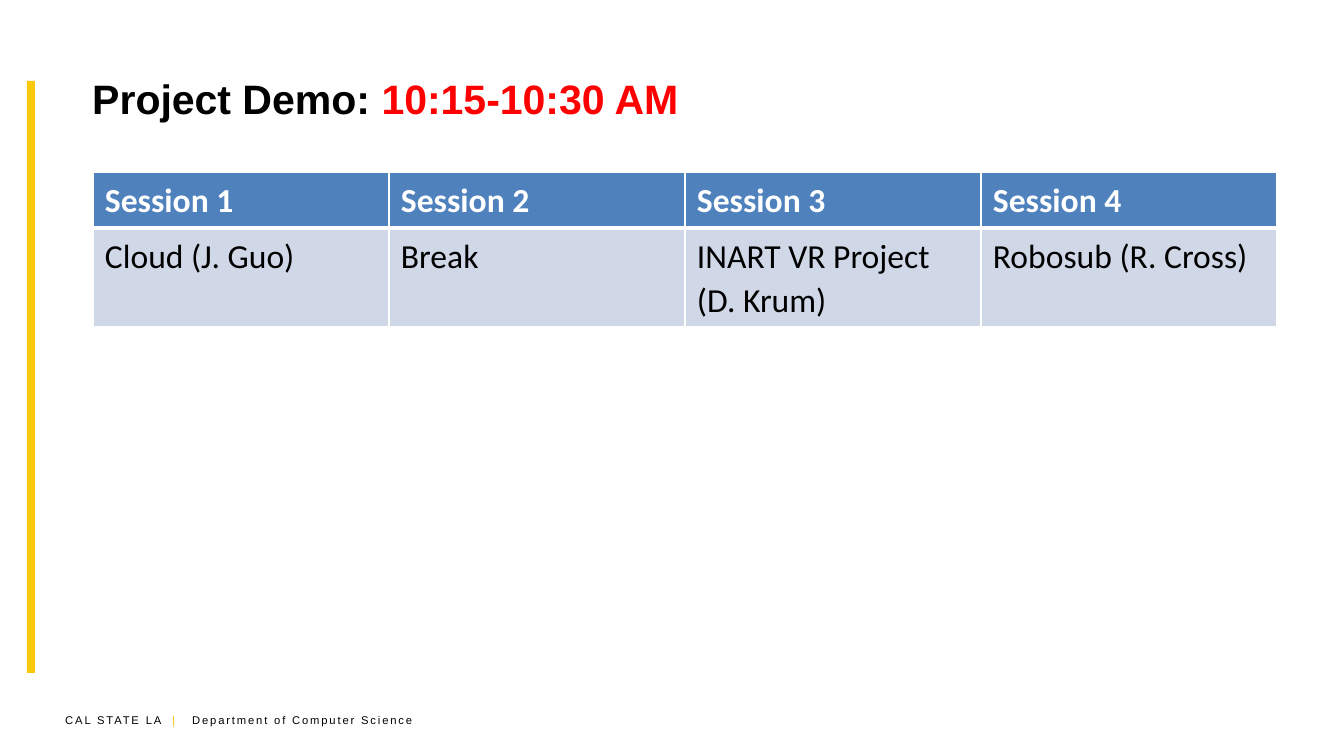
from lxml import etree
from pptx import Presentation
from pptx.dml.color import RGBColor
from pptx.enum.shapes import MSO_SHAPE
from pptx.enum.text import MSO_ANCHOR
from pptx.oxml.ns import qn
from pptx.util import Pt

RECT = MSO_SHAPE.RECTANGLE
MIDDLE = MSO_ANCHOR.MIDDLE

C = {"black": "000000", "white": "FFFFFF", "red": "FF0000",
     "gold": "FCC90A", "header": "4F81BD", "body": "D0D8E8"}

TITLE = [("Project Demo: ", "black"), ("10:15-10:30 AM", "red")]
FOOTER = [("CAL STATE LA\t", "black"), ("|\t", "gold"),
          ("Department of Computer Science", "black")]
FOOTER_TABS = (107, 127)
SESSIONS = [
    ["Session 1", "Session 2", "Session 3", "Session 4"],
    ["Cloud (J. Guo)", "Break", "INART VR Project (D. Krum)", "Robosub (R. Cross)"],
]
ROW_STYLES = [  # height, fill, text colour, bold, bottom border in points
    (56, "header", "white", True, 3),
    (99, "body", "black", False, 1),
]
COL_W = 296


def px(n):
    return round(n * 914400 / 134.4)


def rgb(name):
    return RGBColor.from_string(C[name])


def add_run(p, text, color, size, font="Arial", bold=False, spacing=0):
    r = p.add_run()
    r.text = text
    r.font.name, r.font.size, r.font.bold = font, Pt(size), bold
    r.font.color.rgb = rgb(color)
    if spacing:
        r._r.get_or_add_rPr().set("spc", str(spacing * 100))


def add_text(s, box, anchor=None):
    tf = s.shapes.add_textbox(*map(px, box)).text_frame
    tf.word_wrap = True
    tf.vertical_anchor = anchor
    return tf.paragraphs[0]


def add_tabs(p, stops):
    tabs = etree.SubElement(p._p.get_or_add_pPr(), qn("a:tabLst"))
    for stop in stops:
        etree.SubElement(tabs, qn("a:tab"), pos=str(px(stop)), algn="l")


def add_borders(cell, widths):
    """Draw white cell borders; widths maps a side tag to points."""
    tcPr = cell._tc.get_or_add_tcPr()
    for i, (side, width) in enumerate(widths.items()):
        ln = etree.Element(qn(f"a:{side}"), w=str(Pt(width)))
        fill = etree.SubElement(ln, qn("a:solidFill"))
        etree.SubElement(fill, qn("a:srgbClr"), val=C["white"])
        tcPr.insert(i, ln)


prs = Presentation()
prs.slide_width, prs.slide_height = px(1344), px(756)
s = prs.slides.add_slide(prs.slide_layouts[6])

p = add_text(s, (52, 707, 393, 27))
add_tabs(p, FOOTER_TABS)
for text, color in FOOTER:
    add_run(p, text, color, 6, spacing=1)

bar = s.shapes.add_shape(RECT, px(27), px(81), px(8), px(592))
bar.shadow.inherit = False
bar.fill.solid()
bar.fill.fore_color.rgb = rgb("gold")
bar.line.fill.background()

p = add_text(s, (79, 35, 1196, 126), MIDDLE)
for text, color in TITLE:
    add_run(p, text, color, 22, bold=True)

rows, cols = len(SESSIONS), len(SESSIONS[0])
height = sum(style[0] for style in ROW_STYLES)
table = s.shapes.add_table(rows, cols, px(93), px(172), px(COL_W * cols), px(height)).table
for col in table.columns:
    col.width = px(COL_W)
top_border = 1
for row, texts, (row_h, fill, color, bold, bottom) in zip(table.rows, SESSIONS, ROW_STYLES):
    row.height = px(row_h)
    for cell, text in zip(row.cells, texts):
        cell.margin_left = cell.margin_right = px(12)
        cell.margin_top = cell.margin_bottom = px(6)
        cell.fill.solid()
        cell.fill.fore_color.rgb = rgb(fill)
        add_borders(cell, {"lnL": 1, "lnR": 1, "lnT": top_border, "lnB": bottom})
        p = cell.text_frame.paragraphs[0]
        p.line_spacing, p.space_after = 1.07, Pt(8)
        add_run(p, text, color, 18, "Calibri", bold)
    top_border = bottom

prs.save("out.pptx")
